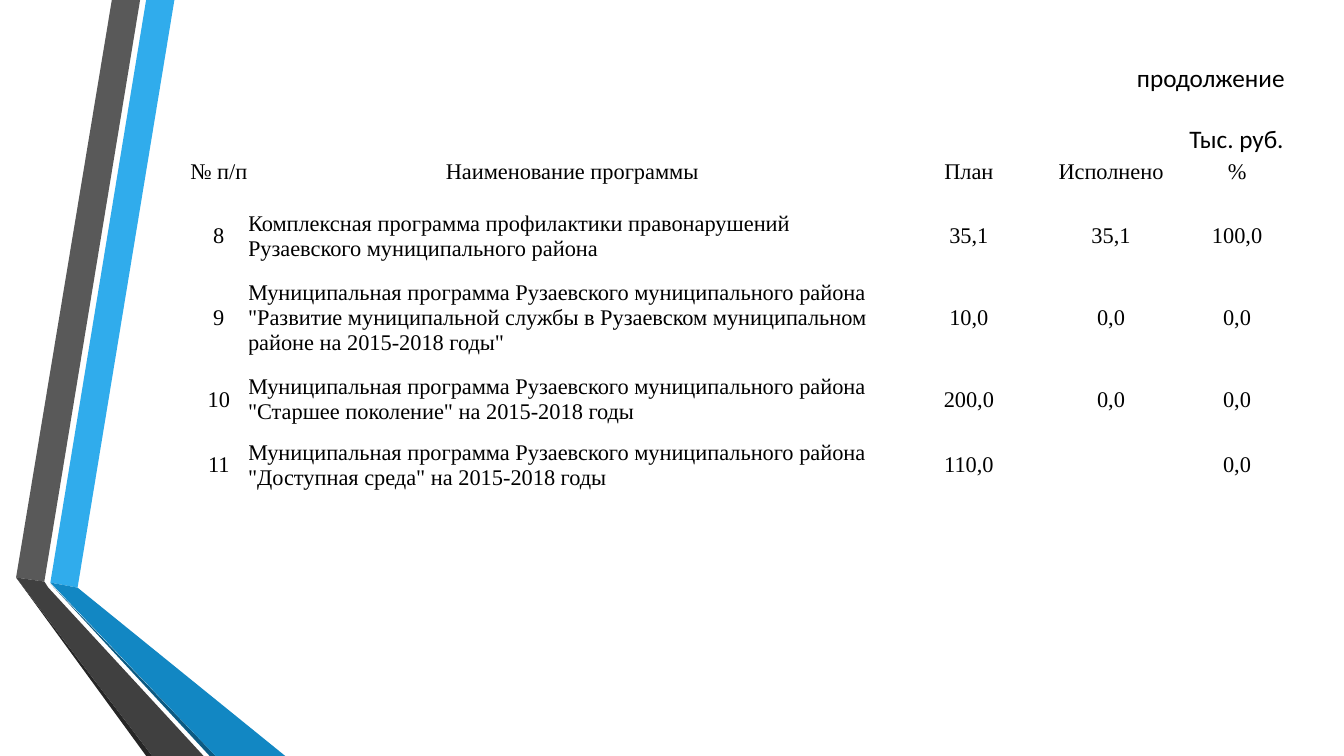
from pptx import Presentation
from pptx.dml.color import RGBColor
from pptx.enum.text import MSO_ANCHOR, PP_ALIGN
from pptx.util import Inches, Pt

BLACK = RGBColor(0x00, 0x00, 0x00)
SKY = RGBColor(0x30, 0xAC, 0xEC)
BLUE = RGBColor(0x12, 0x87, 0xC3)
NAVY = RGBColor(0x0C, 0x5A, 0x82)
GREY = RGBColor(0x59, 0x59, 0x59)
CHARCOAL = RGBColor(0x40, 0x40, 0x40)
SOOT = RGBColor(0x26, 0x26, 0x26)

TABLE_FONT = {"name": "Times New Roman", "size": Pt(16), "bold": False}
LABEL_FONT = {"name": "Calibri", "size": Pt(18)}
NO_MARGINS = dict.fromkeys(
    ("margin_left", "margin_top", "margin_right", "margin_bottom"), 0)

RIBBONS = [
    (SKY, [(0.34, 5.78), (0.61, 5.83), (1.57, 0), (1.29, 0)]),
    (GREY, [(1.23, 0), (0.95, 0), (0, 5.73), (0.28, 5.77)]),
    (SOOT, [(0, 5.73), (1.29, 7.5), (1.35, 7.5)]),
    (NAVY, [(0.34, 5.79), (1.92, 7.5), (1.98, 7.5)]),
    (BLUE, [(0.34, 5.78), (1.98, 7.5), (2.67, 7.5), (0.61, 5.83)]),
    (CHARCOAL, [(1.86, 7.5), (0.32, 5.83), (0.28, 5.77), (0, 5.73), (1.35, 7.5)]),
]

COLUMN_WIDTHS = [0.58, 6.43, 1.44, 1.38, 1.12]
ROW_HEIGHTS = [0.44, 0.65, 0.97, 0.65, 0.65]
NAME_COLUMN = 1
PROGRAMS = [
    ("№ п/п", "Наименование программы", "План", "Исполнено", "%"),
    ("8", "Комплексная программа профилактики правонарушений "
     "Рузаевского муниципального района", "35,1", "35,1", "100,0"),
    ("9", "Муниципальная программа Рузаевского муниципального района "
     '"Развитие муниципальной службы в Рузаевском муниципальном районе '
     'на 2015-2018 годы"', "10,0", "0,0", "0,0"),
    ("10", "Муниципальная программа Рузаевского муниципального района "
     '"Старшее поколение" на 2015-2018 годы', "200,0", "0,0", "0,0"),
    ("11", "Муниципальная программа Рузаевского муниципального района "
     '"Доступная среда" на 2015-2018 годы', "110,0", "", "0,0"),
]


def apply_format(target, values):
    """Set each attribute named in values on the target."""
    for name, value in values.items():
        setattr(target, name, value)


def write_text(frame, text, font, alignment):
    """Write one formatted black paragraph into a text frame."""
    para = frame.paragraphs[0]
    para.alignment = alignment
    para.font.size = font["size"]
    if text:
        span = para.add_run()
        span.text = text
        apply_format(span.font, font)
        span.font.color.rgb = BLACK


def add_ribbons(page, left, top):
    """Draw the folded ribbons from the given top left corner."""
    for color, corners in RIBBONS:
        points = [(Inches(left + x), Inches(top + y)) for x, y in corners]
        builder = page.shapes.build_freeform(*points[0])
        builder.add_line_segments(points[1:], close=True)
        ribbon = builder.convert_to_shape()
        ribbon.shadow.inherit = False
        ribbon.fill.solid()
        ribbon.fill.fore_color.rgb = color
        ribbon.line.fill.background()


def add_label(page, text, left, top, width, height):
    """Place a right-aligned label in the given box."""
    box = page.shapes.add_textbox(*map(Inches, (left, top, width, height)))
    box.text_frame.word_wrap = False
    write_text(box.text_frame, text, LABEL_FONT, PP_ALIGN.RIGHT)


def add_program_table(page, left, top):
    """Place the program table at the given corner."""
    size = (sum(COLUMN_WIDTHS), sum(ROW_HEIGHTS))
    frame = page.shapes.add_table(len(ROW_HEIGHTS), len(COLUMN_WIDTHS),
                                  *map(Inches, (left, top, *size)))
    table = frame.table
    apply_format(table, {"first_row": False, "horz_banding": False})
    for column, width in zip(table.columns, COLUMN_WIDTHS):
        column.width = Inches(width)
    for index, (row, height) in enumerate(zip(table.rows, ROW_HEIGHTS)):
        row.height = Inches(height)
        for position, (cell, text) in enumerate(zip(row.cells, PROGRAMS[index])):
            is_name = index > 0 and position == NAME_COLUMN
            cell.fill.background()
            apply_format(cell, NO_MARGINS)
            cell.vertical_anchor = MSO_ANCHOR.MIDDLE if index else MSO_ANCHOR.TOP
            write_text(cell.text_frame, text, TABLE_FONT,
                       PP_ALIGN.LEFT if is_name else PP_ALIGN.CENTER)


def main():
    """Build the program continuation slide."""
    deck = Presentation()
    apply_format(deck, {"slide_width": Inches(13.33), "slide_height": Inches(7.5)})
    page = deck.slides.add_slide(deck.slide_layouts[6])
    add_ribbons(page, 0.16, 0)
    add_program_table(page, 1.88, 1.58)
    add_label(page, "Тыс. руб.", 11.66, 1.17, 1.17, 0.4)
    add_label(page, "продолжение", 11.14, 0.57, 1.7, 0.4)
    deck.save("out.pptx")


if __name__ == "__main__":
    main()
